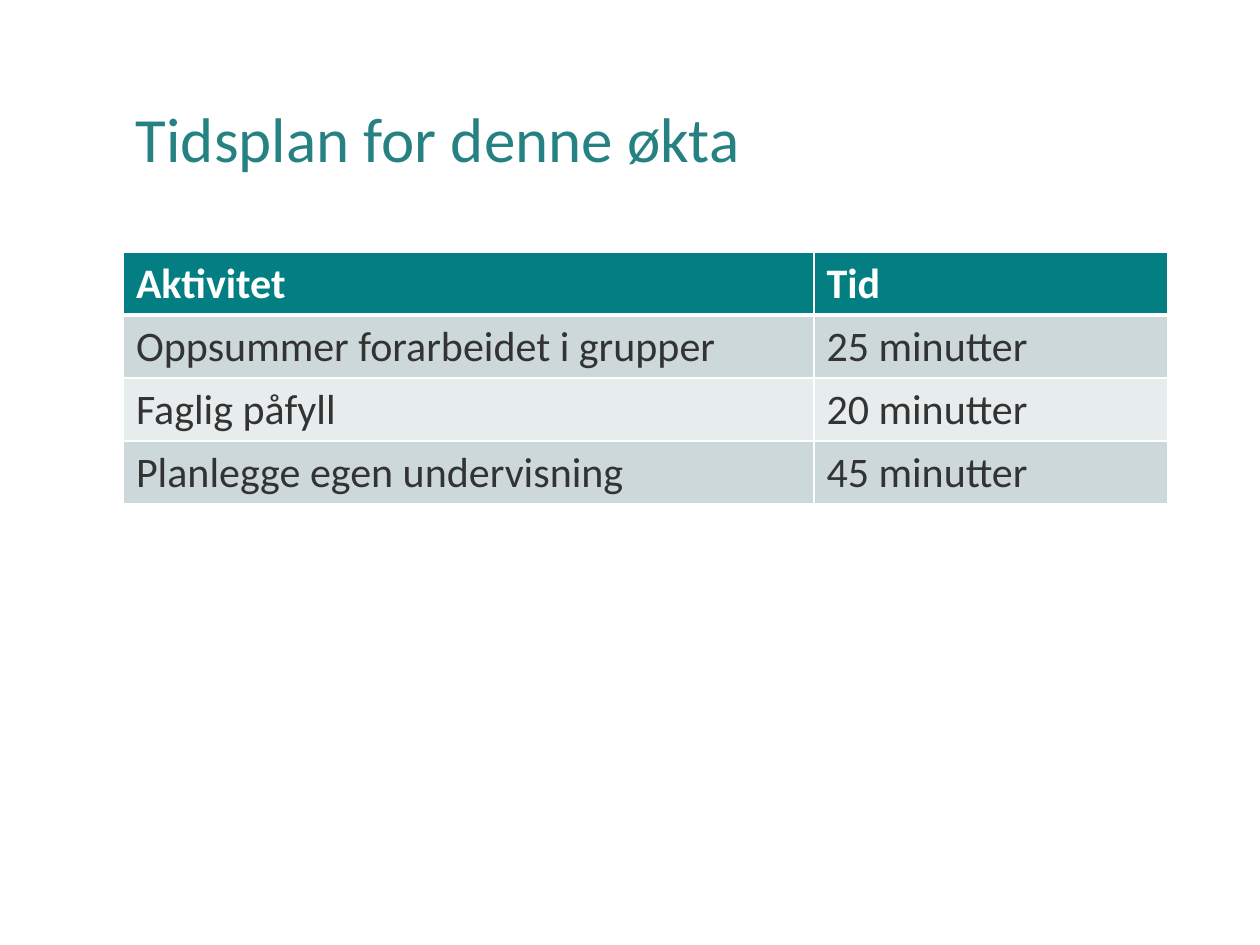
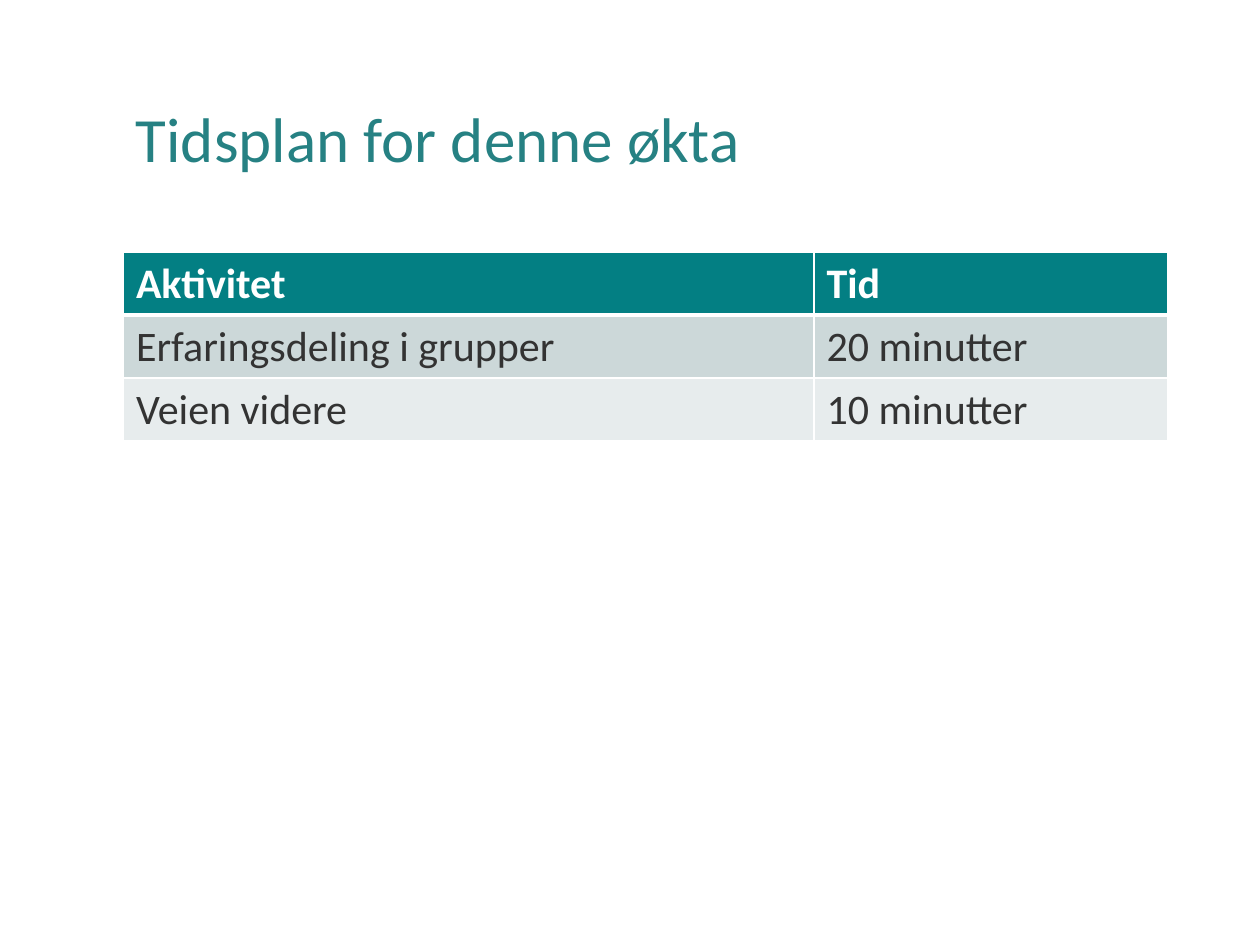
import pptx
import pptx.util
import pptx.dml.color
import pptx.enum.text
from lxml import etree
from pptx.oxml.ns import qn

# Content
TITLE = "Tidsplan for denne økta"
HEADER = ("Aktivitet", "Tid")
SCHEDULES = [
    [
        ("Oppsummer forarbeidet i grupper", "25 minutter"),
        ("Faglig påfyll", "20 minutter"),
        ("Planlegge egen undervisning", "45 minutter"),
    ],
    [
        ("Erfaringsdeling i grupper", "20 minutter"),
        ("Veien videre", "10 minutter"),
    ],
]

# Shared style and layout, in inches and points
COLORS = {
    "title": "268183",
    "header": "037F83",
    "odd": "CCD8D9",
    "even": "E7ECED",
    "text": "333333",
    "white": "FFFFFF",
}
FONT = "Calibri"
LEFT, WIDTH = 0.98, 8.29
TITLE_TOP, TITLE_HEIGHT = 0.4, 1.45
TABLE_TOP, ROW_HEIGHT = 2, 0.5
COLUMNS = (5.48, 2.81)
THIN, THICK = 1, 3

inch = pptx.util.Inches


def rgb(name):
    return pptx.dml.color.RGBColor.from_string(COLORS[name])


def add_run(p, text, size, color, bold=False):
    r = p.add_run()
    r.text = text
    r.font.name = FONT
    r.font.size = pptx.util.Pt(size)
    r.font.bold = bold
    r.font.color.rgb = rgb(color)


def add_title(s):
    sp = s.shapes.add_textbox(inch(LEFT), inch(TITLE_TOP), inch(WIDTH), inch(TITLE_HEIGHT))
    tf = sp.text_frame
    tf.word_wrap = True
    tf.vertical_anchor = pptx.enum.text.MSO_ANCHOR.MIDDLE
    p = tf.paragraphs[0]
    p.line_spacing = 0.9
    add_run(p, TITLE, 36, "title")


def set_borders(cell, widths):
    tcPr = cell._tc.get_or_add_tcPr()
    for side, width in widths.items():
        ln = etree.SubElement(tcPr, qn(f"a:ln{side}"), w=str(pptx.util.Pt(width)))
        fill = etree.SubElement(ln, qn("a:solidFill"))
        etree.SubElement(fill, qn("a:srgbClr"), val=COLORS["white"])


def add_schedule(s, activities):
    rows = [HEADER, *activities]
    table = s.shapes.add_table(
        len(rows), len(COLUMNS), inch(LEFT), inch(TABLE_TOP),
        inch(WIDTH), inch(ROW_HEIGHT * len(rows)),
    ).table
    for column, width in zip(table.columns, COLUMNS):
        column.width = inch(width)

    for i, row in enumerate(rows):
        is_header = i == 0
        fill = "header" if is_header else ("even", "odd")[i % 2]
        # A thick rule separates the header from the activities
        borders = {
            "L": THIN,
            "R": THIN,
            "T": THICK if i == 1 else THIN,
            "B": THICK if is_header else THIN,
        }
        for j, text in enumerate(row):
            cell = table.cell(i, j)
            set_borders(cell, borders)
            cell.fill.solid()
            cell.fill.fore_color.rgb = rgb(fill)
            add_run(cell.text_frame.paragraphs[0], text, 24,
                    "white" if is_header else "text", is_header)


def main():
    prs = pptx.Presentation()
    prs.slide_width, prs.slide_height = inch(10), inch(7.5)
    for activities in SCHEDULES:
        s = prs.slides.add_slide(prs.slide_layouts[6])
        add_title(s)
        add_schedule(s, activities)
    prs.save("out.pptx")


if __name__ == "__main__":
    main()
